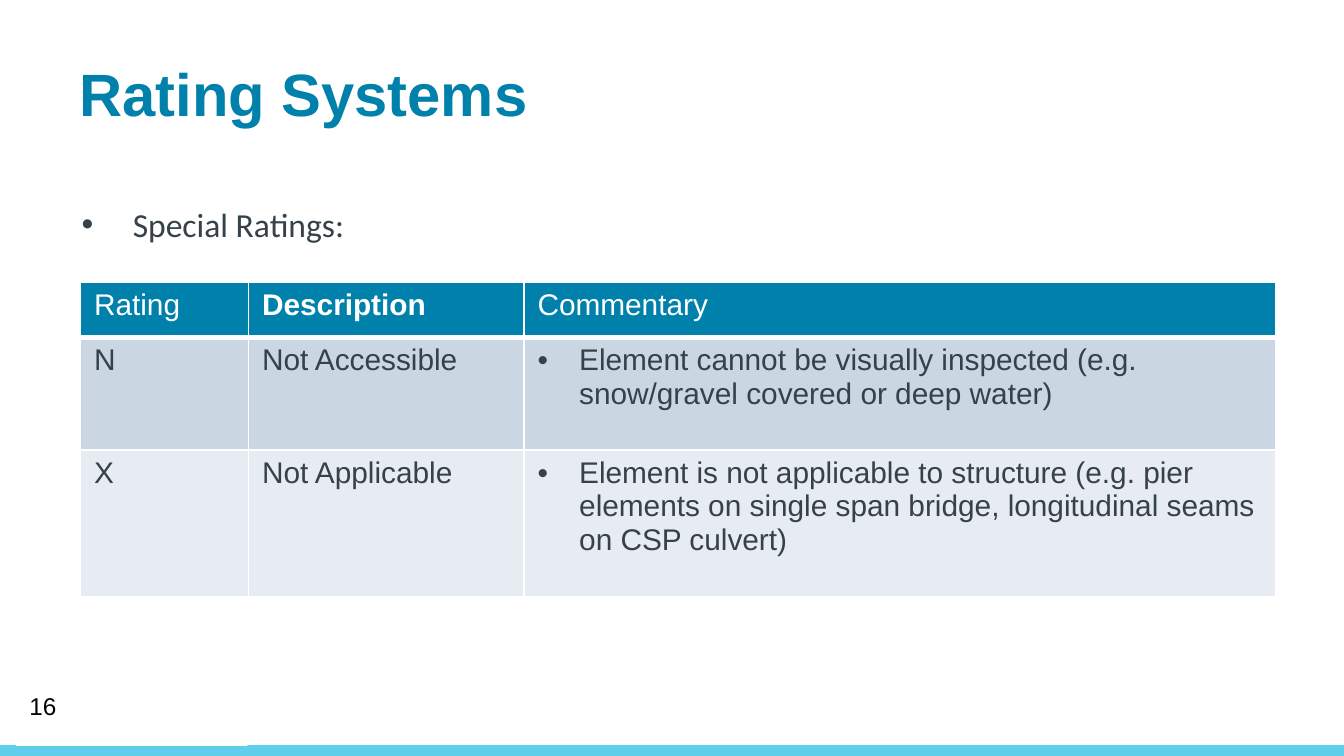
from dataclasses import dataclass

from lxml.etree import SubElement
from pptx import Presentation
from pptx.dml.color import RGBColor as RGB
from pptx.enum.shapes import MSO_SHAPE as Shape
from pptx.enum.text import MSO_ANCHOR as Anchor
from pptx.oxml.ns import qn
from pptx.util import Inches, Pt


@dataclass(frozen=True)
class Theme:
    heading_font: str = "Arial"
    body_font: str = "Calibri"
    blue: str = "0081AB"
    sky: str = "5FCEEA"
    ink: str = "36424A"
    black: str = "000000"
    white: str = "FFFFFF"
    bands: tuple = ("CAD7E2", "E6ECF1")
    title_size: int = 32
    body_size: int = 18
    table_size: int = 16
    number_size: int = 13


THEME = Theme()
PAGE_WIDTH = 10
PAGE_HEIGHT = PAGE_WIDTH * 9 / 16
FOOTER_HEIGHT = 0.08
COLUMN_WIDTHS = (1.25, 2.05, 5.59)
ROW_HEIGHTS = (0.41, 0.84, 1.09)
HEADERS = ("Rating", "Description", "Commentary")
RATINGS = (
    ("N", "Not Accessible",
     "Element cannot be visually inspected (e.g. snow/gravel covered or deep water)"),
    ("X", "Not Applicable",
     "Element is not applicable to structure (e.g. pier elements on single span bridge, "
     "longitudinal seams on CSP culvert)"),
)


def add_bullet(para, indent):
    """Give the paragraph a round bullet with a hanging indent in inches."""
    props = para._p.get_or_add_pPr()
    props.set("marL", str(Inches(indent)))
    props.set("indent", str(-Inches(indent)))
    colour = SubElement(props, qn("a:buClr"))
    SubElement(colour, qn("a:srgbClr"), val=THEME.ink)
    SubElement(props, qn("a:buFont"), typeface="Arial")
    SubElement(props, qn("a:buChar"), char="•")


def write(frame, text, size, colour, font=THEME.heading_font, bold=False, indent=None):
    para = frame.paragraphs[0]
    if indent:
        add_bullet(para, indent)
    span = para.add_run()
    span.text = text
    span.font.name = font
    span.font.size = Pt(size)
    span.font.bold = bold
    span.font.color.rgb = RGB.from_string(colour)


def add_bar(page, left, top, width, height, colour):
    bar = page.shapes.add_shape(
        Shape.RECTANGLE, Inches(left), Inches(top), Inches(width), Inches(height))
    bar.shadow.inherit = False
    bar.fill.solid()
    bar.fill.fore_color.rgb = RGB.from_string(colour)
    bar.line.fill.background()


def add_text(page, left, top, width, height, anchor=Anchor.TOP):
    """Add an empty wrapping text box and return its text frame."""
    box = page.shapes.add_textbox(Inches(left), Inches(top), Inches(width), Inches(height))
    frame = box.text_frame
    frame.word_wrap = True
    frame.vertical_anchor = anchor
    return frame


def set_borders(cell, top, bottom):
    props = cell._tc.get_or_add_tcPr()
    for side, width in (("L", 1), ("R", 1), ("T", top), ("B", bottom)):
        line = SubElement(props, qn(f"a:ln{side}"), w=str(Pt(width)))
        fill = SubElement(line, qn("a:solidFill"))
        SubElement(fill, qn("a:srgbClr"), val=THEME.white)


def style_cell(cell, colour, top=1, bottom=1):
    set_borders(cell, top, bottom)
    cell.fill.solid()
    cell.fill.fore_color.rgb = RGB.from_string(colour)


def add_ratings_table(page):
    table = page.shapes.add_table(
        len(ROW_HEIGHTS), len(COLUMN_WIDTHS), Inches(0.6), Inches(2.1),
        Inches(sum(COLUMN_WIDTHS)), Inches(sum(ROW_HEIGHTS))).table
    for column, width in zip(table.columns, COLUMN_WIDTHS):
        column.width = Inches(width)
    for row, height in zip(table.rows, ROW_HEIGHTS):
        row.height = Inches(height)

    for cell, text in zip(table.rows[0].cells, HEADERS):
        style_cell(cell, THEME.blue, bottom=3)
        write(cell.text_frame, text, THEME.table_size, THEME.white,
              bold=text == "Description")

    for index, (rating, band) in enumerate(zip(RATINGS, THEME.bands), start=1):
        for column, text in enumerate(rating):
            cell = table.cell(index, column)
            style_cell(cell, band, top=3 if index == 1 else 1)
            write(cell.text_frame, text, THEME.table_size, THEME.ink,
                  indent=0.31 if column == 2 else None)


def main():
    deck = Presentation()
    deck.slide_width, deck.slide_height = Inches(PAGE_WIDTH), Inches(PAGE_HEIGHT)
    page = deck.slides.add_slide(deck.slide_layouts[6])

    add_bar(page, 0, PAGE_HEIGHT - FOOTER_HEIGHT, PAGE_WIDTH, FOOTER_HEIGHT, THEME.sky)
    add_bar(page, 0.12, 5.42, 1.72, 0.13, THEME.white)

    number = add_text(page, 0.12, 5.1, 2.25, 0.3, Anchor.MIDDLE)
    write(number, "16", THEME.number_size, THEME.black)

    intro = add_text(page, 0.51, 1.47, 9.07, 0.79)
    write(intro, "Special Ratings:", THEME.body_size, THEME.ink,
          font=THEME.body_font, indent=0.38)

    title = add_text(page, 0.59, 0.37, 8.99, 0.57)
    title.margin_left = 0
    write(title, "Rating Systems", THEME.title_size, THEME.blue, bold=True)

    add_ratings_table(page)
    deck.save("out.pptx")


if __name__ == "__main__":
    main()
